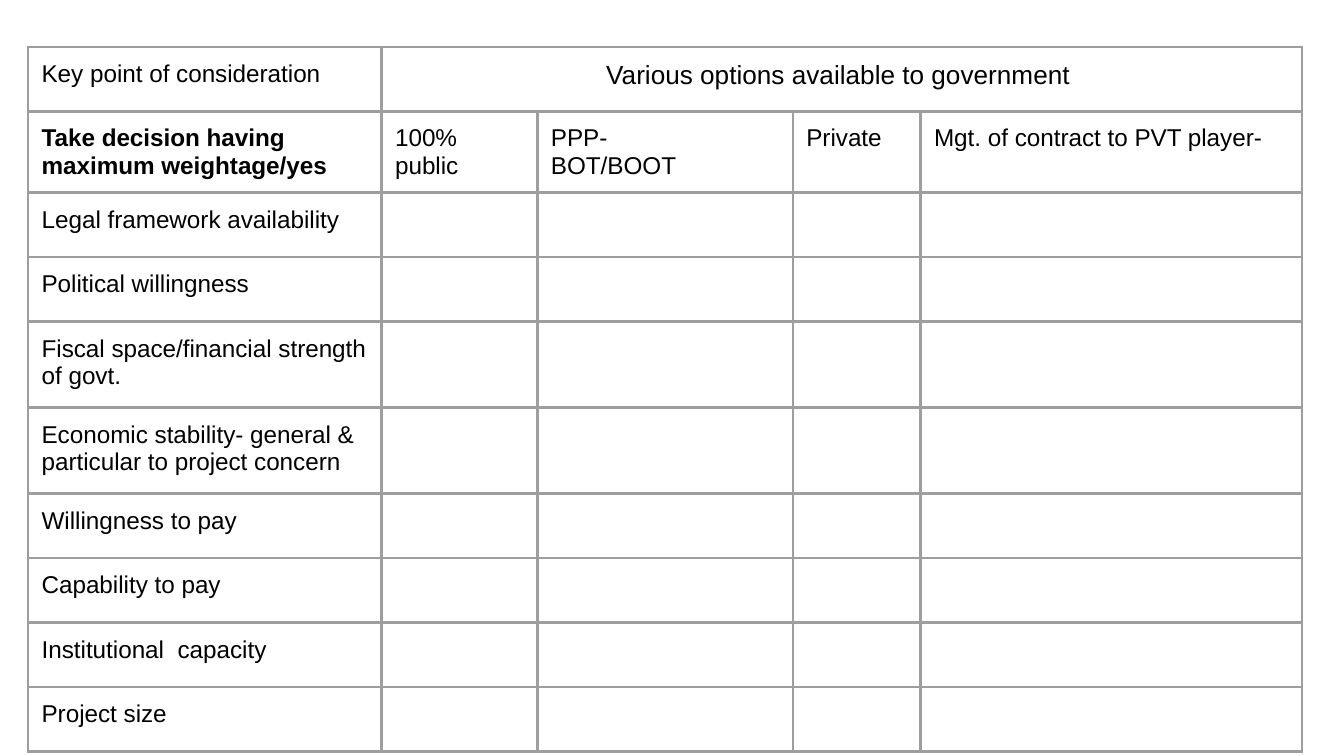
from pptx import Presentation
from pptx.dml.color import RGBColor
from pptx.enum.text import PP_ALIGN
from pptx.oxml import parse_xml
from pptx.oxml.ns import nsdecls
from pptx.util import Inches, Pt

# Content
HEADER = ("Key point of consideration", "Various options available to government ")
OPTIONS = (
    "Take decision having maximum weightage/yes",
    "100% public",
    "PPP-\nBOT/BOOT",
    "Private",
    "Mgt. of contract to PVT player-",
)
CRITERIA = (
    "Legal framework availability",
    "Political willingness",
    "Fiscal space/financial strength of govt.",
    "Economic stability- general & particular to project concern",
    "Willingness to pay",
    "Capability to pay",
    "Institutional  capacity",
    "Project size",
)
ROWS = [HEADER, OPTIONS] + [(name,) for name in CRITERIA]

# Layout in inches
LEFT, TOP = 0.21, 0.35
COL_WIDTHS = (2.63, 1.16, 1.9, 0.95, 2.84)
ROW_HEIGHT, OPTIONS_HEIGHT, TWO_LINE_HEIGHT = 0.48, 0.6, 0.64
MARGIN = 0.1
LONG_LABEL = 30  # characters that fit on one line of the first column

THEME = {
    "font": "Arial",
    "text": RGBColor(0, 0, 0),
    "border": "9E9E9E",
    "border_width": Pt(1.5),
    "size": Pt(13),
    "title_size": Pt(14),
}


def row_height(row):
    if row is OPTIONS:
        return OPTIONS_HEIGHT
    return TWO_LINE_HEIGHT if len(row[0]) > LONG_LABEL else ROW_HEIGHT


def set_borders(cell):
    tc_pr = cell._tc.get_or_add_tcPr()
    for i, side in enumerate(("lnL", "lnR", "lnT", "lnB")):
        tc_pr.insert(i, parse_xml(
            f'<a:{side} {nsdecls("a")} w="{THEME["border_width"]}"><a:solidFill>'
            f'<a:srgbClr val="{THEME["border"]}"/></a:solidFill></a:{side}>'))


def write(cell, text, size, bold=False, align=PP_ALIGN.LEFT):
    cell.margin_left = cell.margin_right = Inches(MARGIN)
    cell.margin_top = cell.margin_bottom = Inches(MARGIN)
    cell.text_frame.text = text
    for p in cell.text_frame.paragraphs:
        p.alignment = align
        for r in p.runs:
            r.font.name = THEME["font"]
            r.font.size = size
            r.font.bold = bold
            r.font.color.rgb = THEME["text"]


# Widescreen slide, 16:9
prs = Presentation()
prs.slide_width = Inches(10)
prs.slide_height = Inches(10 * 9 / 16)
s = prs.slides.add_slide(prs.slide_layouts[6])

# Table grid
heights = [row_height(row) for row in ROWS]
table = s.shapes.add_table(
    len(ROWS), len(COL_WIDTHS), Inches(LEFT), Inches(TOP),
    Inches(sum(COL_WIDTHS)), Inches(sum(heights))).table
table.first_row = table.horz_banding = False
for col, width in zip(table.columns, COL_WIDTHS):
    col.width = Inches(width)
for row, height in zip(table.rows, heights):
    row.height = Inches(height)

# Plain bordered cells
for cell in table.iter_cells():
    cell.fill.background()
    set_borders(cell)

# Text: the title spans all options, the decision prompt is bold
table.cell(0, 1).merge(table.cell(0, len(COL_WIDTHS) - 1))
for i, row in enumerate(ROWS):
    for j, text in enumerate(row):
        if (i, j) == (0, 1):
            write(table.cell(i, j), text, THEME["title_size"], align=PP_ALIGN.CENTER)
        else:
            write(table.cell(i, j), text, THEME["size"], bold=(i, j) == (1, 0))

prs.save("out.pptx")
